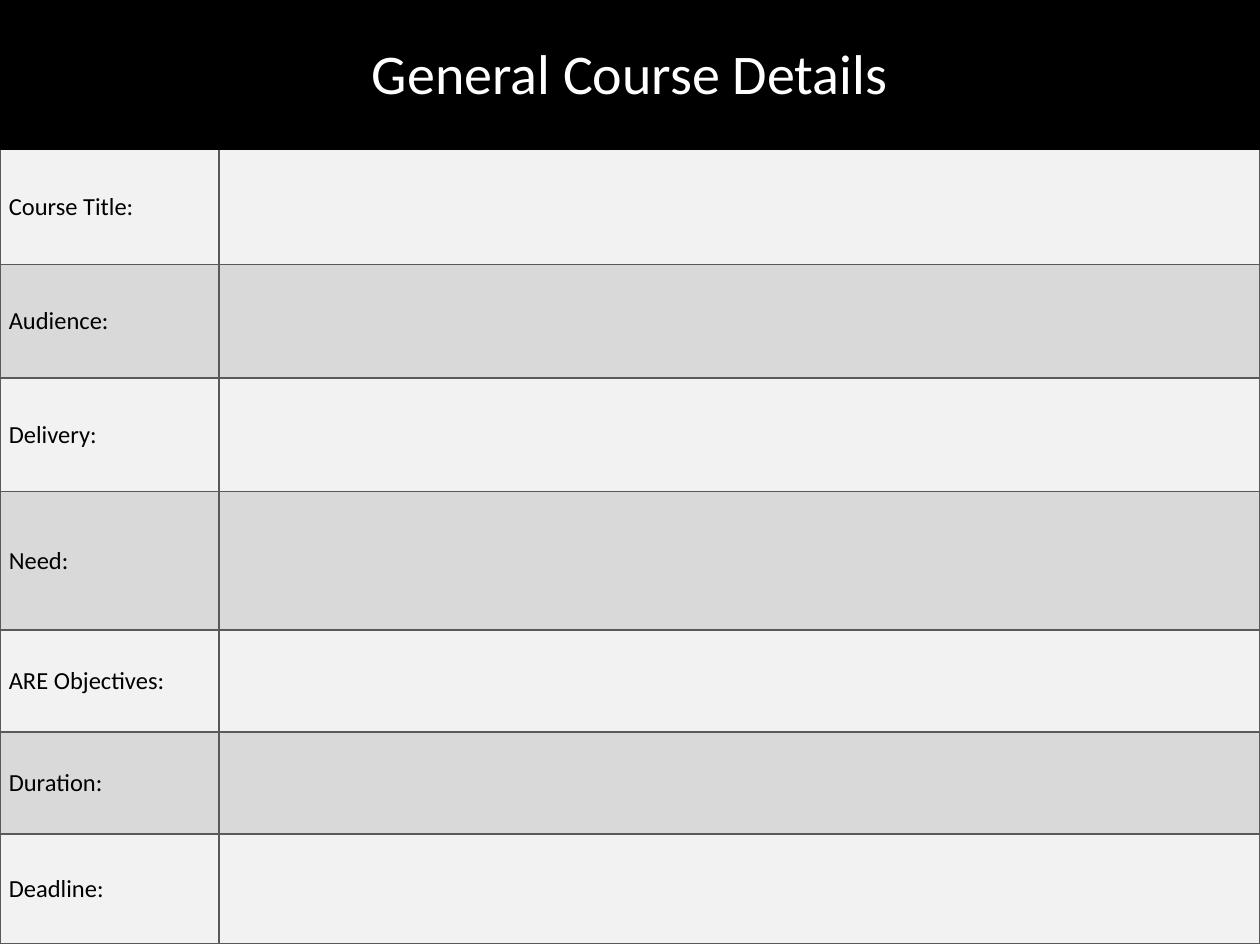
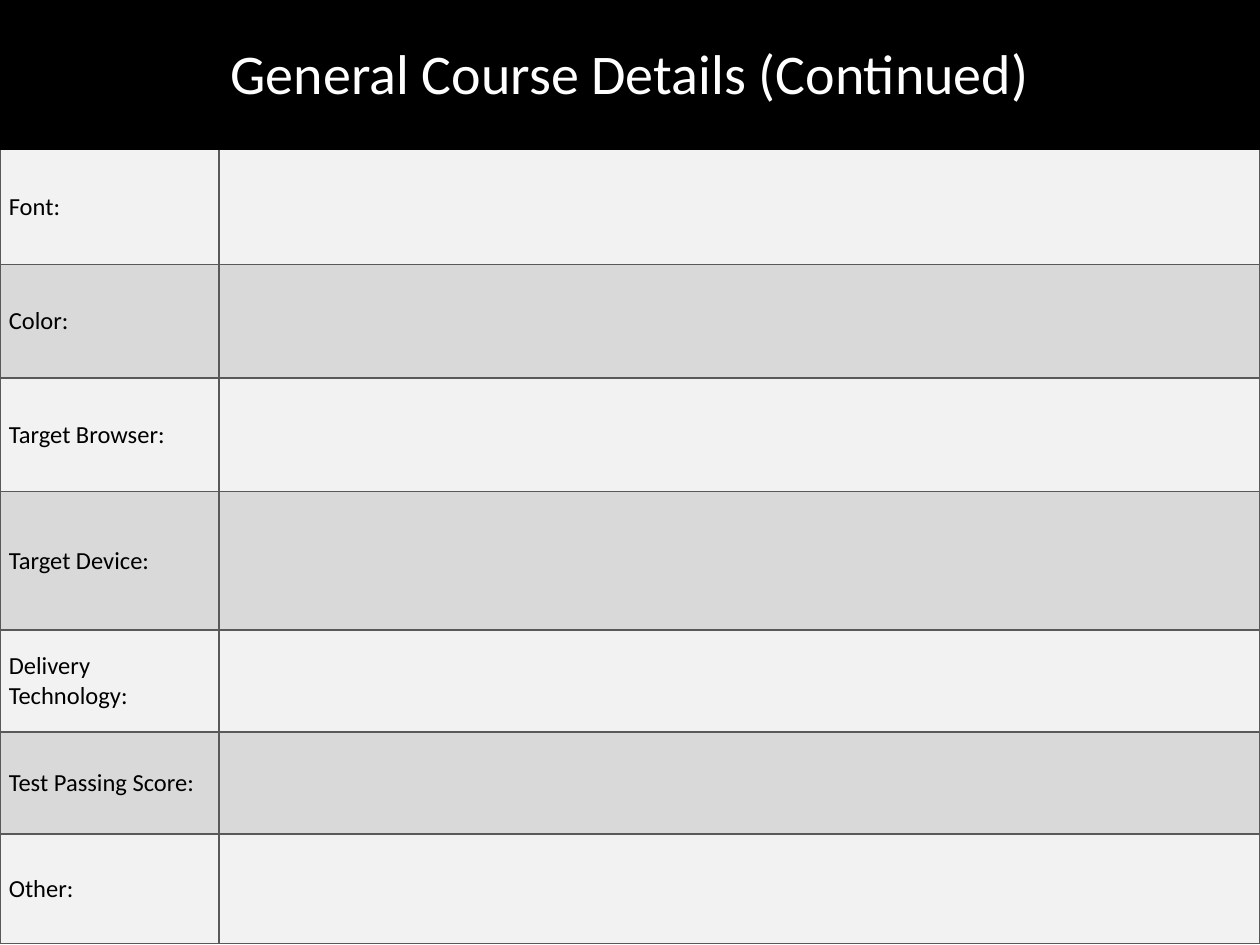
import pptx
import pptx.util
import pptx.dml.color
import pptx.enum.text
from lxml import etree
from pptx.oxml.ns import qn

PAGES = [
    ("General Course Details",
     ["Course Title:", "Audience:", "Delivery:", "Need:",
      "ARE Objectives:", "Duration:", "Deadline:"]),
    ("General Course Details (Continued)",
     ["Font:", "Color:", "Target Browser:", "Target Device:",
      "Delivery Technology:", "Test Passing Score:", "Other:"]),
]

WIDE, HIGH = 10, 7.5
COLS = [1.74, 8.26]
ROWS = [1.19, 0.91, 0.9, 0.9, 1.1, 0.81, 0.81, 0.87]
FONT = "Calibri"
BLACK, WHITE, RULE = "000000", "FFFFFF", "595959"
BANDS = ["F2F2F2", "D9D9D9"]
ALIGN = pptx.enum.text.PP_ALIGN
inch = pptx.util.Inches


def hue(code):
    return pptx.dml.color.RGBColor.from_string(code)


def write(cell, text, size=14, color=BLACK, align=ALIGN.LEFT):
    para = cell.text_frame.paragraphs[0]
    para.alignment = align
    run = para.add_run()
    run.text = text
    run.font.name = FONT
    run.font.size = pptx.util.Pt(size)
    run.font.color.rgb = hue(color)


def border(cell, sides):
    props = cell._tc.get_or_add_tcPr()
    for place, side in enumerate("LRTB"):
        line = etree.Element(qn("a:ln" + side), w=str(pptx.util.Pt(1)))
        if side in sides:
            fill = etree.SubElement(line, qn("a:solidFill"))
            etree.SubElement(fill, qn("a:srgbClr"), val=RULE)
        else:
            etree.SubElement(line, qn("a:noFill"))
        props.insert(place, line)


def style(cell, fill, sides):
    cell.fill.solid()
    cell.fill.fore_color.rgb = hue(fill)
    cell.vertical_anchor = pptx.enum.text.MSO_ANCHOR.MIDDLE
    cell.margin_left = cell.margin_right = inch(0.07)
    cell.margin_top = cell.margin_bottom = inch(0.04)
    border(cell, sides)


def build(deck, title, labels):
    slide = deck.slides.add_slide(deck.slide_layouts[6])
    frame = slide.shapes.add_table(
        len(ROWS), len(COLS), 0, 0, inch(WIDE), inch(HIGH))
    grid = frame.table
    for col, width in zip(grid.columns, COLS):
        col.width = inch(width)
    for row, height in zip(grid.rows, ROWS):
        row.height = inch(height)

    head = grid.cell(0, 0)
    head.merge(grid.cell(0, 1))
    for cell in grid.rows[0].cells:
        style(cell, BLACK, "")
    write(head, title, size=32, color=WHITE, align=ALIGN.CENTER)

    for place, label in enumerate(labels):
        row = place + 1
        for cell in grid.rows[row].cells:
            style(cell, BANDS[place % 2], "LRTB" if place else "LRB")
        write(grid.cell(row, 0), label)


def main():
    deck = pptx.Presentation()
    deck.slide_width, deck.slide_height = inch(WIDE), inch(HIGH)
    for title, labels in PAGES:
        build(deck, title, labels)
    deck.save("out.pptx")


if __name__ == "__main__":
    main()
